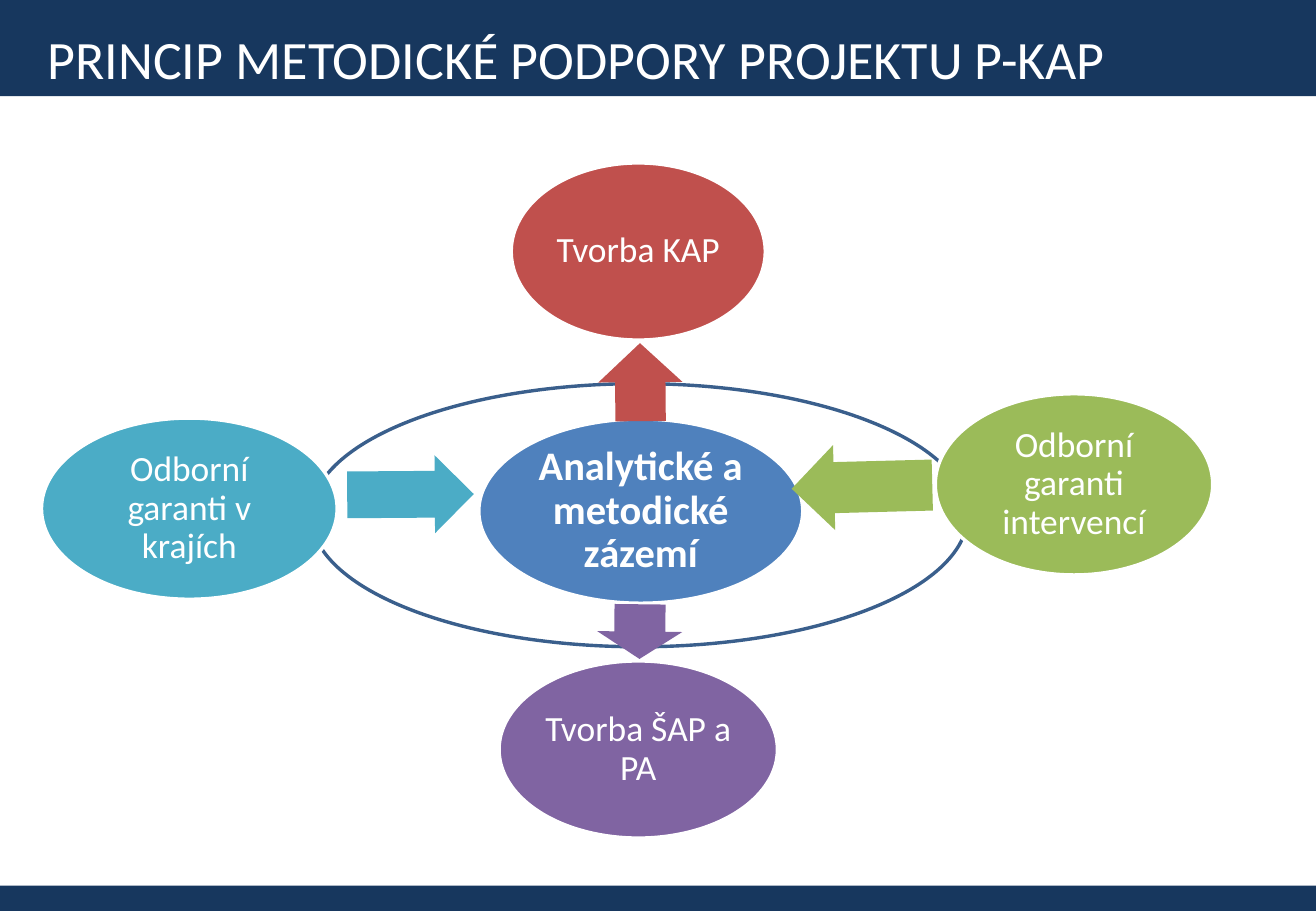
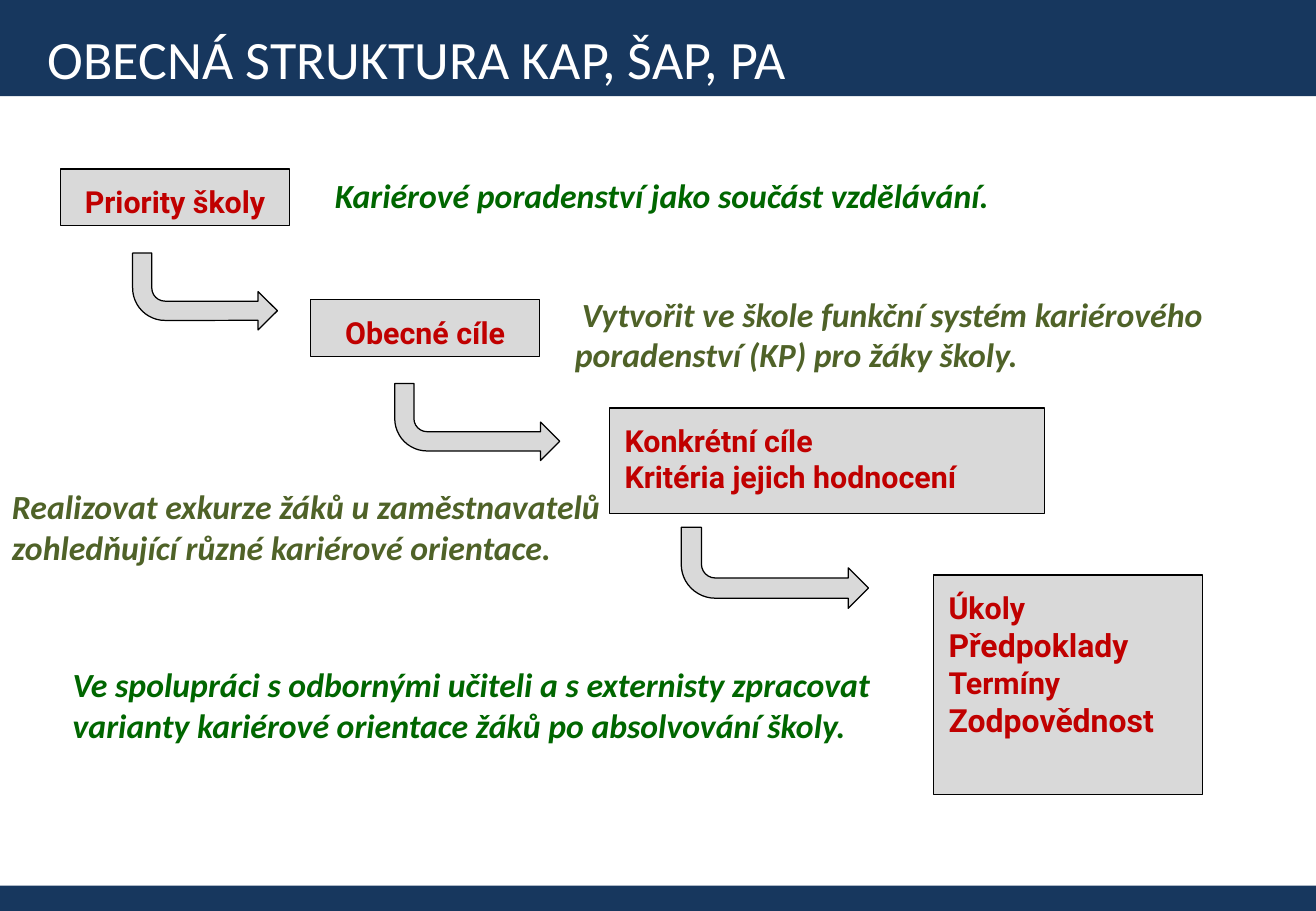
from pptx import Presentation
from pptx import util as u
from pptx.dml.color import RGBColor
from pptx.enum import shapes, text

SCALE = 7620  # EMU per px, 120 px to the inch
WIDTH, HEIGHT = 1300, 900

NAVY = RGBColor(0x17, 0x37, 0x5E)
WHITE = RGBColor(0xFF, 0xFF, 0xFF)
BLACK = RGBColor(0x00, 0x00, 0x00)
RING = RGBColor(0x3A, 0x5F, 0x8C)
BLUE = RGBColor(0x4F, 0x81, 0xBD)
RED = RGBColor(0xC0, 0x50, 0x4D)
LIME = RGBColor(0x9B, 0xBB, 0x59)
PURPLE = RGBColor(0x80, 0x64, 0xA2)
TEAL = RGBColor(0x4B, 0xAC, 0xC6)
GREY = RGBColor(0xD9, 0xD9, 0xD9)
CRIMSON = RGBColor(0xC0, 0x00, 0x00)
GREEN = RGBColor(0x00, 0x66, 0x00)
OLIVE = RGBColor(0x4F, 0x62, 0x28)

SHAPE = shapes.MSO_SHAPE
LEFT, CENTER = text.PP_ALIGN.LEFT, text.PP_ALIGN.CENTER
TOP, MIDDLE = text.MSO_ANCHOR.TOP, text.MSO_ANCHOR.MIDDLE


def px(*lengths):
    return [u.Emu(n * SCALE) for n in lengths]


class Deck:
    def __init__(self):
        self.prs = Presentation()
        self.prs.slide_width, self.prs.slide_height = px(WIDTH, HEIGHT)
        self.slide = None

    def new_slide(self, title):
        self.slide = self.prs.slides.add_slide(self.prs.slide_layouts[6])
        self.shape(SHAPE.RECTANGLE, (0, 875, WIDTH, 25), NAVY)
        band = self.shape(SHAPE.RECTANGLE, (0, 0, WIDTH, 95), NAVY)
        self.set_text(band, [(title, 32)], WHITE, insets=(47, 24, 47, 5),
                      anchor=MIDDLE, wrap=False)

    def shape(self, kind, box, fill, line=None, width=0.75, adjust=()):
        shape = self.slide.shapes.add_shape(kind, *px(*box))
        shape.shadow.inherit = False
        shape.fill.solid()
        shape.fill.fore_color.rgb = fill
        if line is None:
            shape.line.fill.background()
        else:
            shape.line.color.rgb = line
            shape.line.width = u.Pt(width)
        for i, value in enumerate(adjust):
            shape.adjustments[i] = value
        return shape

    def set_text(self, shape, lines, color, font="Calibri", bold=False, italic=False,
                 align=LEFT, anchor=TOP, insets=(12, 6, 12, 6), spacing=None, wrap=True):
        frame = shape.text_frame
        frame.word_wrap = wrap
        frame.vertical_anchor = anchor
        (frame.margin_left, frame.margin_top,
         frame.margin_right, frame.margin_bottom) = px(*insets)
        for i, (line, size) in enumerate(lines):
            para = frame.add_paragraph() if i else frame.paragraphs[0]
            para.text = line
            para.alignment = align
            para.line_spacing = spacing
            para.font.name, para.font.size = font, u.Pt(size)
            para.font.bold, para.font.italic = bold, italic
            para.font.color.rgb = color

    def bubble(self, box, label, fill, size=21, bold=False):
        oval = self.shape(SHAPE.OVAL, box, fill, WHITE, 2)
        self.set_text(oval, [(label, size)], WHITE, bold=bold, align=CENTER,
                      anchor=MIDDLE, insets=(4, 4, 4, 4), spacing=0.9)

    def block_arrow(self, box, angle, fill):
        arrow = self.shape(SHAPE.RIGHT_ARROW, box, fill, adjust=(0.6, 0.5))
        arrow.rotation = angle

    def step(self, box, lines, align=CENTER):
        card = self.shape(SHAPE.RECTANGLE, box, GREY, BLACK)
        indent = 15 if align == LEFT else 0
        self.set_text(card, lines, CRIMSON, "Roboto", bold=True, align=align,
                      insets=(indent, 14, 0, 6))

    def bent_arrow(self, box):
        arrow = self.shape(SHAPE.BENT_ARROW, box, GREY, BLACK,
                           adjust=(0.25, 0.25, 0.25, 0.42))
        arrow.element.spPr.xfrm.set("flipV", "1")

    def note(self, box, label, color, indent=0):
        note = self.slide.shapes.add_textbox(*px(*box))
        self.set_text(note, [(label, 20)], color, bold=True, italic=True)
        if indent:
            props = note.text_frame.paragraphs[0]._p.get_or_add_pPr()
            props.set("indent", str(indent * SCALE))


def support_slide(deck):
    deck.new_slide("PRINCIP METODICKÉ PODPORY PROJEKTU P-KAP")
    deck.shape(SHAPE.OVAL, (307, 379, 649, 260), WHITE, RING, 2)
    deck.bubble((473, 414, 320, 182), "Analytické a metodické zázemí", BLUE, 24, True)
    # Arrow and bubble for each partner of the centre
    for label, fill, bubble, arrow, angle in (
        ("Tvorba KAP", RED, (505, 161, 251, 175), (594, 336, 77, 83), 269.5),
        ("Odborní garanti intervencí", LIME, (924, 389, 274, 179),
         (782, 439, 139, 84), 178.5),
        ("Tvorba ŠAP a PA", PURPLE, (493, 653, 275, 175), (605, 582, 54, 84), 90.6),
        ("Odborní garanti v krajích", TEAL, (41, 413, 292, 179),
         (343, 450, 125, 77), 359.6),
    ):
        deck.block_arrow(arrow, angle, fill)
        deck.bubble(bubble, label, fill)


def structure_slide(deck):
    deck.new_slide("OBECNÁ STRUKTURA KAP, ŠAP, PA")
    # Steps of the cascade
    deck.step((60, 167, 226, 56), [("Priority školy", 18)])
    deck.step((307, 296, 226, 56), [("Obecné cíle", 18)])
    deck.step((602, 403, 430, 104),
              [("Konkrétní cíle", 18), ("Kritéria jejich hodnocení", 18)], LEFT)
    deck.step((922, 568, 266, 217),
              [("Úkoly", 18), ("Předpoklady", 18.9),
               ("Termíny", 18), ("Zodpovědnost", 18.9)], LEFT)
    for box in ((131, 250, 143, 76), (390, 379, 163, 76), (673, 521, 185, 80)):
        deck.bent_arrow(box)
    # Example beside each step
    deck.note((556, 284, 707, 92), "Vytvořit ve škole funkční systém kariérového "
              "poradenství (KP) pro žáky školy.", OLIVE, indent=7)
    deck.note((319, 167, 798, 53), "Kariérové poradenství jako součást vzdělávání.", GREEN)
    deck.note((0, 474, 635, 92), "Realizovat exkurze žáků u zaměstnavatelů "
              "zohledňující různé kariérové orientace.", OLIVE)
    deck.note((60, 650, 850, 92), "Ve spolupráci s odbornými učiteli a s externisty "
              "zpracovat varianty kariérové orientace žáků po absolvování školy.", GREEN)


def main():
    deck = Deck()
    support_slide(deck)
    structure_slide(deck)
    deck.prs.save("out.pptx")


if __name__ == "__main__":
    main()
